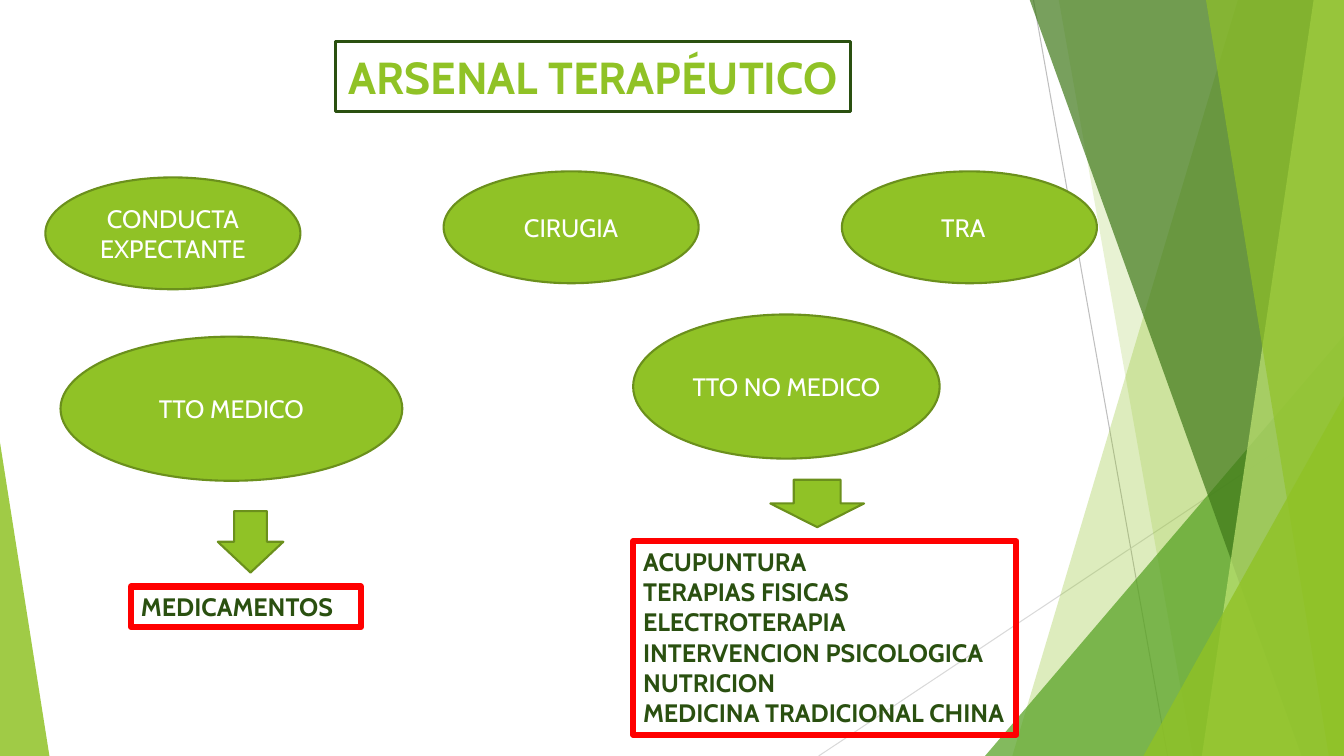
from dataclasses import dataclass

from lxml import etree
from pptx import Presentation
from pptx.dml.color import RGBColor
from pptx.enum.shapes import MSO_CONNECTOR, MSO_SHAPE
from pptx.enum.text import MSO_ANCHOR, MSO_AUTO_SIZE, PP_ALIGN
from pptx.oxml.ns import qn
from pptx.util import Inches, Pt

OVAL, ARROW = MSO_SHAPE.OVAL, MSO_SHAPE.DOWN_ARROW
TRIANGLE, STRAIGHT = MSO_SHAPE.ISOSCELES_TRIANGLE, MSO_CONNECTOR.STRAIGHT
MIDDLE, TOP = MSO_ANCHOR.MIDDLE, MSO_ANCHOR.TOP
CENTER, LEFT = PP_ALIGN.CENTER, PP_ALIGN.LEFT
NO_FIT, GROW = MSO_AUTO_SIZE.NONE, MSO_AUTO_SIZE.SHAPE_TO_FIT_TEXT


@dataclass(frozen=True)
class Theme:
    font: str = "Cabin"
    title_size: int = 32
    text_size: int = 18
    green: str = "90C226"
    outline: str = "6B901C"
    dark: str = "2A5010"
    white: str = "FFFFFF"
    red: str = "FF0000"
    leaf: str = "54A021"
    forest: str = "3F7819"
    lime: str = "C0E474"


THEME = Theme()
WIDTH, HEIGHT, BLEED = 13.33, 7.5, -0.01

# Content: boxes are left, top, width, height in inches
TITLE = ("ARSENAL TERAPÉUTICO", (3.33, 0.41, 5.11, 0.7))
SMALL, ROW_TOP = (2.53, 1.11), 1.7
OVALS = [
    ("CONDUCTA EXPECTANTE", (0.45, ROW_TOP + 0.06, *SMALL)),
    ("CIRUGIA", (4.4, ROW_TOP, *SMALL)),
    ("TRA", (8.35, ROW_TOP, *SMALL)),
    ("TTO NO MEDICO", (6.28, 3.12, 3.04, 1.43)),
]
MEDICAL = ("TTO MEDICO", (0.6, 3.34, 3.39, 1.43))
LISTS = [
    (["MEDICAMENTOS"], (1.3, 5.82, 2.28, 0.4), True),
    (["ACUPUNTURA", "TERAPIAS FISICAS", "ELECTROTERAPIA",
      "INTERVENCION PSICOLOGICA", "NUTRICION", "MEDICINA TRADICIONAL CHINA"],
     (6.28, 5.37, 3.8, 1.92), False),
]
ARROWS = [(2.16, 5.07, 0.65, 0.61), (7.64, 4.76, 0.93, 0.47)]

# Backdrop: bands run from a slanted left edge (top x, bottom x) to the right
# edge; corners are right triangles standing on the bottom (width, height, side)
RAYS = [((10.25, 0), (11.58, HEIGHT), "BFBFBF"),
        ((WIDTH, 4.03), (8.12, HEIGHT), "D9D9D9")]
BACKDROP = [
    ("band", (12.28, 10.04), THEME.green, 30),
    ("band", (10.5, 11.83), THEME.green, 20),
    ("corner", (3.56, 4.17, 1), THEME.leaf, 72),
    ("band", (10.21, 12.91), THEME.forest, 70),
    ("band", (13.03, 11.92), THEME.lime, 70),
    ("band", (11.96, 13.18), THEME.green, 65),
    ("corner", (1.99, 3.57, 1), THEME.green, 80),
    ("corner", (0.49, 3.11, 0), THEME.green, 85),
]


def rgb(code):
    return RGBColor.from_string(code)


def inches(values):
    return [Inches(value) for value in values]


def paint(shape, fill, line, width=1.5):
    if fill:
        shape.fill.solid()
        shape.fill.fore_color.rgb = rgb(fill)
    else:
        shape.fill.background()
    if line:
        shape.line.color.rgb = rgb(line)
        shape.line.width = Pt(width)
    else:
        shape.line.fill.background()


def write(shape, lines, color, size=THEME.text_size, bold=False,
          align=CENTER, anchor=MIDDLE, fit=NO_FIT, wrap=True):
    frame = shape.text_frame
    frame.text = "\n".join(lines)
    frame.word_wrap, frame.auto_size = wrap, fit
    frame.vertical_anchor = anchor
    for para in frame.paragraphs:
        para.alignment = align
        font = para.font
        font.name, font.size, font.bold = THEME.font, Pt(size), bold
        font.color.rgb = rgb(color)


def place(shape, box):
    shape.left, shape.top, shape.width, shape.height = inches(box)
    shape.element.getparent().append(shape.element)  # bring to front


def add_backdrop(page):
    for start, end, color in RAYS:
        ray = page.shapes.add_connector(STRAIGHT, *inches(start + end))
        ray.line.color.rgb, ray.line.width = rgb(color), Pt(0.75)
        etree.SubElement(ray.element.spPr, qn("a:effectLst"))
    for kind, numbers, color, opacity in BACKDROP:
        if kind == "band":
            top_x, bottom_x = numbers
            outline = page.shapes.build_freeform(*inches((top_x, BLEED)))
            outline.add_line_segments(
                [inches(point) for point in
                 ((WIDTH, BLEED), (WIDTH, HEIGHT), (bottom_x, HEIGHT))])
            shape = outline.convert_to_shape()
        else:
            width, height, side = numbers
            box = ((WIDTH - width) * side, HEIGHT - height, width, height)
            shape = page.shapes.add_shape(TRIANGLE, *inches(box))
            shape.adjustments[0] = side
        shape.shadow.inherit = False
        paint(shape, color, None)
        fill_color = shape.element.spPr.find(qn("a:solidFill"))[0]
        etree.SubElement(fill_color, qn("a:alpha"), val=str(opacity * 1000))


def add_title(page):
    text, box = TITLE
    title = page.shapes.title
    place(title, box)
    paint(title, None, THEME.dark, 2.25)
    write(title, [text], THEME.green, THEME.title_size, bold=True)


def add_medical(page):
    text, box = MEDICAL
    body = page.placeholders[1]
    place(body, box)
    geometry = etree.Element(qn("a:prstGeom"), prst="ellipse")
    etree.SubElement(geometry, qn("a:avLst"))
    body.element.spPr.find(qn("a:xfrm")).addnext(geometry)
    paint(body, THEME.green, THEME.outline)
    write(body, [text], THEME.white, align=LEFT)
    para = body.text_frame.paragraphs[0]
    para.space_before = Pt(10)
    # Hanging arrowhead bullet
    props = para._p.get_or_add_pPr()
    indent = Inches(0.38)
    props.set("marL", str(indent))
    props.set("indent", str(-indent))
    bullet_color = etree.Element(qn("a:buClr"))
    etree.SubElement(bullet_color, qn("a:srgbClr"), val=THEME.green)
    bullet = [bullet_color,
              etree.Element(qn("a:buSzPct"), val="80000"),
              etree.Element(qn("a:buChar"), char="▶")]
    at = props.index(props.find(qn("a:defRPr")))
    props[at:at] = bullet


def add_ovals(page):
    for text, box in OVALS:
        oval = page.shapes.add_shape(OVAL, *inches(box))
        oval.shadow.inherit = False
        paint(oval, THEME.green, THEME.outline)
        write(oval, [text], THEME.white)
        if text == "TRA":
            oval.text_frame.margin_right = Inches(0.22)


def add_lists(page):
    for lines, box, wrap in LISTS:
        frame_box = page.shapes.add_textbox(*inches(box))
        paint(frame_box, None, THEME.red, 4.5)
        write(frame_box, lines, THEME.dark, bold=True, align=LEFT,
              anchor=TOP, fit=GROW, wrap=wrap)


def add_arrows(page):
    for box in ARROWS:
        arrow = page.shapes.add_shape(ARROW, *inches(box))
        arrow.shadow.inherit = False
        paint(arrow, THEME.green, THEME.outline)


def main():
    deck = Presentation()
    deck.slide_width, deck.slide_height = inches((WIDTH, HEIGHT))
    page = deck.slides.add_slide(deck.slide_layouts[1])
    for add_part in (add_backdrop, add_title, add_medical,
                     add_ovals, add_lists, add_arrows):
        add_part(page)
    deck.save("out.pptx")


if __name__ == "__main__":
    main()
